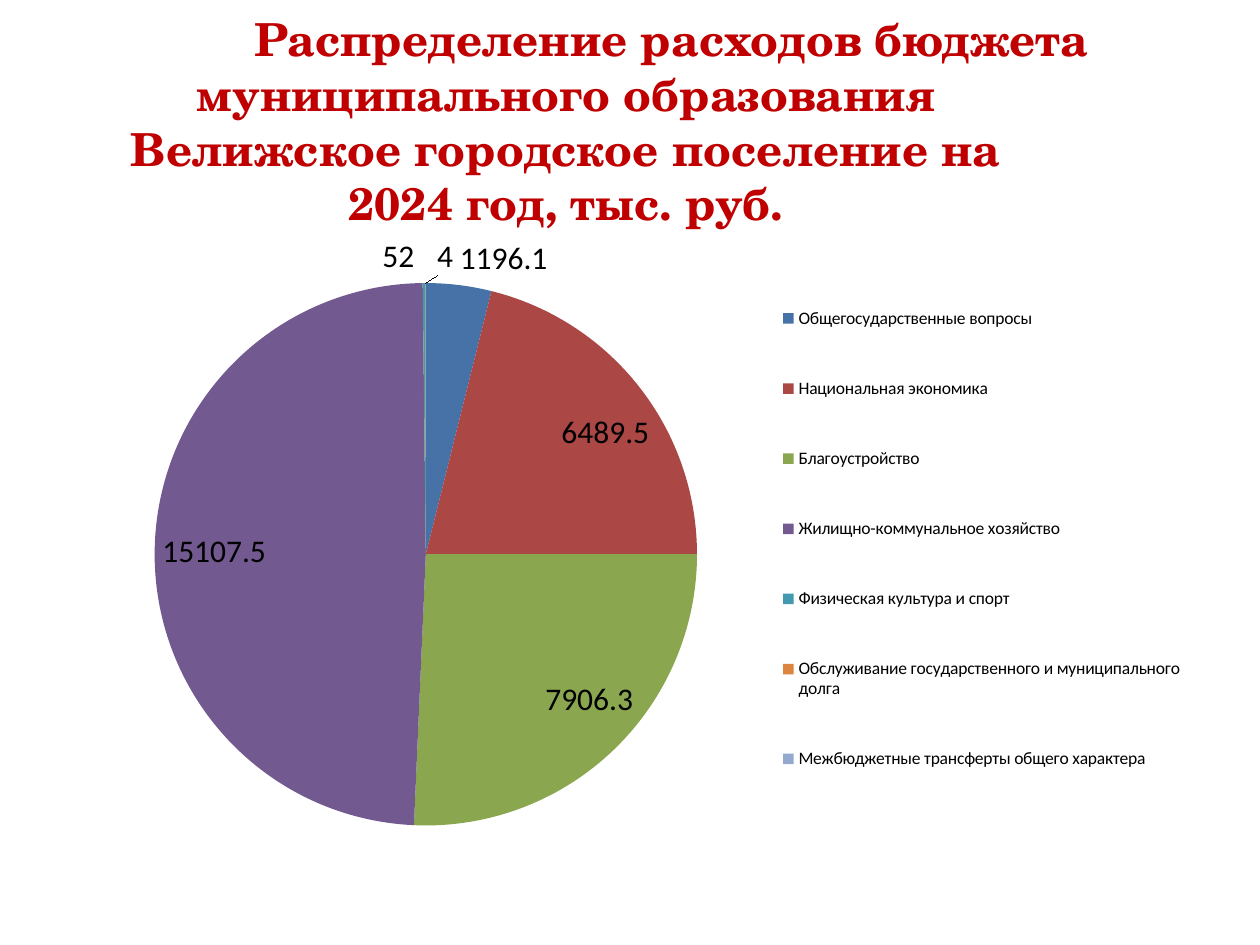
from dataclasses import dataclass
from typing import NamedTuple, Optional

from lxml.etree import SubElement
from pptx import Presentation
from pptx.chart.data import CategoryChartData
from pptx.dml.color import RGBColor as RGB
from pptx.enum.chart import XL_CHART_TYPE as ChartType
from pptx.enum.chart import XL_LABEL_POSITION as LabelPos
from pptx.enum.chart import XL_LEGEND_POSITION as LegendPos
from pptx.enum.text import MSO_ANCHOR as Anchor
from pptx.enum.text import MSO_AUTO_SIZE as AutoSize
from pptx.enum.text import PP_ALIGN as Align
from pptx.oxml.ns import qn
from pptx.util import Cm, Pt


@dataclass(frozen=True)
class Theme:
    title_font: str = "TeX Gyre Schola"
    body_font: str = "Calibri"
    title_color: RGB = RGB(0xC0, 0x00, 0x00)
    text_color: RGB = RGB(0x00, 0x00, 0x00)
    title_size: Pt = Pt(26)
    label_size: Pt = Pt(18)
    legend_size: Pt = Pt(10)


class TitleLine(NamedTuple):
    text: str
    right_indent: Cm = Cm(0)


class Expense(NamedTuple):
    name: str
    amount: float


class Area(NamedTuple):
    """Part of the chart, as fractions of its width and height."""
    x: float
    y: float
    w: float
    h: float


THEME = Theme()
TITLE = [
    TitleLine("Распределение расходов бюджета"),
    TitleLine("муниципального образования", Cm(4.25)),
    TitleLine("Велижское городское поселение на 2024 год, тыс. руб."),
]
EXPENSES = [
    Expense("Общегосударственные вопросы", 1196.1),
    Expense("Национальная экономика", 6489.5),
    Expense("Благоустройство", 7906.3),
    Expense("Жилищно-коммунальное хозяйство", 15107.5),
    Expense("Физическая культура и спорт", 52),
    Expense("Обслуживание государственного и муниципального долга", 4),
    Expense("Межбюджетные трансферты общего характера", 0),
]
PIE_AREA = Area(0.08, 0.1, 0.48, 0.87)
LEGEND_AREA = Area(0.63, 0.06, 0.36, 0.9)


def style_font(font, size: Pt, color: RGB, name: str, bold: bool = False) -> None:
    font.size, font.name, font.bold = size, name, bold
    font.color.rgb = color


def fill_title(s) -> None:
    sp = s.shapes.title
    sp.left, sp.top, sp.width, sp.height = Cm(2.11), Cm(0.84), Cm(22.86), Cm(3.18)
    tf = sp.text_frame
    tf.word_wrap, tf.auto_size = True, AutoSize.NONE
    tf.vertical_anchor = Anchor.MIDDLE
    for i, line in enumerate(TITLE):
        p = tf.paragraphs[0] if i == 0 else tf.add_paragraph()
        p.alignment = Align.CENTER
        if line.right_indent:
            p._p.get_or_add_pPr().set("marR", str(line.right_indent))
        r = p.add_run()
        r.text = line.text
        style_font(r.font, THEME.title_size, THEME.title_color, THEME.title_font, True)


def place(layout, area: Area, inner: bool = False) -> None:
    """Give a chart layout element a fixed area."""
    for child in list(layout):
        layout.remove(child)
    manual = SubElement(layout, qn("c:manualLayout"))
    settings = [("layoutTarget", "inner")] if inner else []
    settings += [("xMode", "edge"), ("yMode", "edge")]
    settings += [(key, str(value)) for key, value in area._asdict().items()]
    for tag, value in settings:
        SubElement(manual, qn(f"c:{tag}")).set("val", value)


def layout_of(parent, index: int):
    """Return the layout element of a chart part, added at index if missing."""
    layout: Optional[object] = parent.find(qn("c:layout"))
    if layout is None:
        layout = SubElement(parent, qn("c:layout"))
        parent.insert(index, layout)
    return layout


def add_expense_pie(s) -> None:
    data = CategoryChartData()
    data.categories = [e.name for e in EXPENSES]
    data.add_series("Series 1", [e.amount for e in EXPENSES])
    chart = s.shapes.add_chart(ChartType.PIE, Cm(1.27), Cm(4.45),
                               Cm(22.86), Cm(12.57), data).chart
    chart.has_title = False
    style_font(chart.font, THEME.label_size, THEME.text_color, THEME.body_font)

    # Slices take the theme accents in turn
    plot = chart.plots[0]
    plot.vary_by_categories = True
    place(layout_of(chart._chartSpace.chart.plotArea, 0), PIE_AREA, inner=True)

    # Value labels, with zero left blank
    plot.has_data_labels = True
    labels = plot.data_labels
    labels.show_value, labels.show_percentage = True, False
    labels.number_format, labels.number_format_is_linked = "General;-General;", False
    labels.position = LabelPos.BEST_FIT
    style_font(labels.font, THEME.label_size, THEME.text_color, THEME.body_font)
    leader = labels._element.find(qn("c:showLeaderLines"))
    if leader is None:
        leader = SubElement(labels._element, qn("c:showLeaderLines"))
    leader.set("val", "1")

    # Legend
    chart.has_legend = True
    legend = chart.legend
    legend.position, legend.include_in_layout = LegendPos.RIGHT, False
    style_font(legend.font, THEME.legend_size, THEME.text_color, THEME.body_font)
    place(layout_of(legend._element, 1), LEGEND_AREA)


def main() -> None:
    prs = Presentation()
    prs.slide_width, prs.slide_height = Cm(25.4), Cm(19.05)
    s = prs.slides.add_slide(prs.slide_layouts[5])
    fill_title(s)
    add_expense_pie(s)
    prs.save("out.pptx")


if __name__ == "__main__":
    main()
